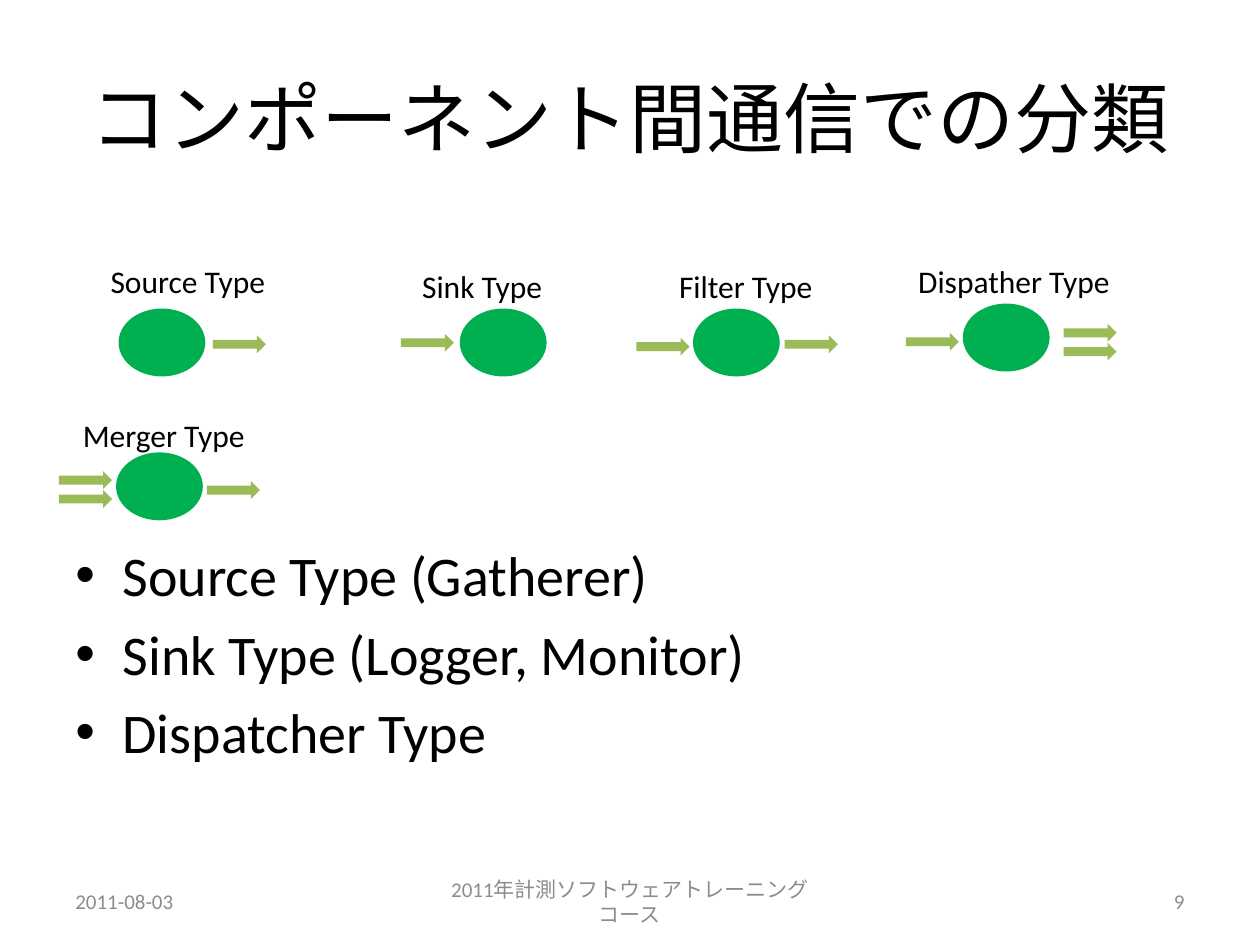
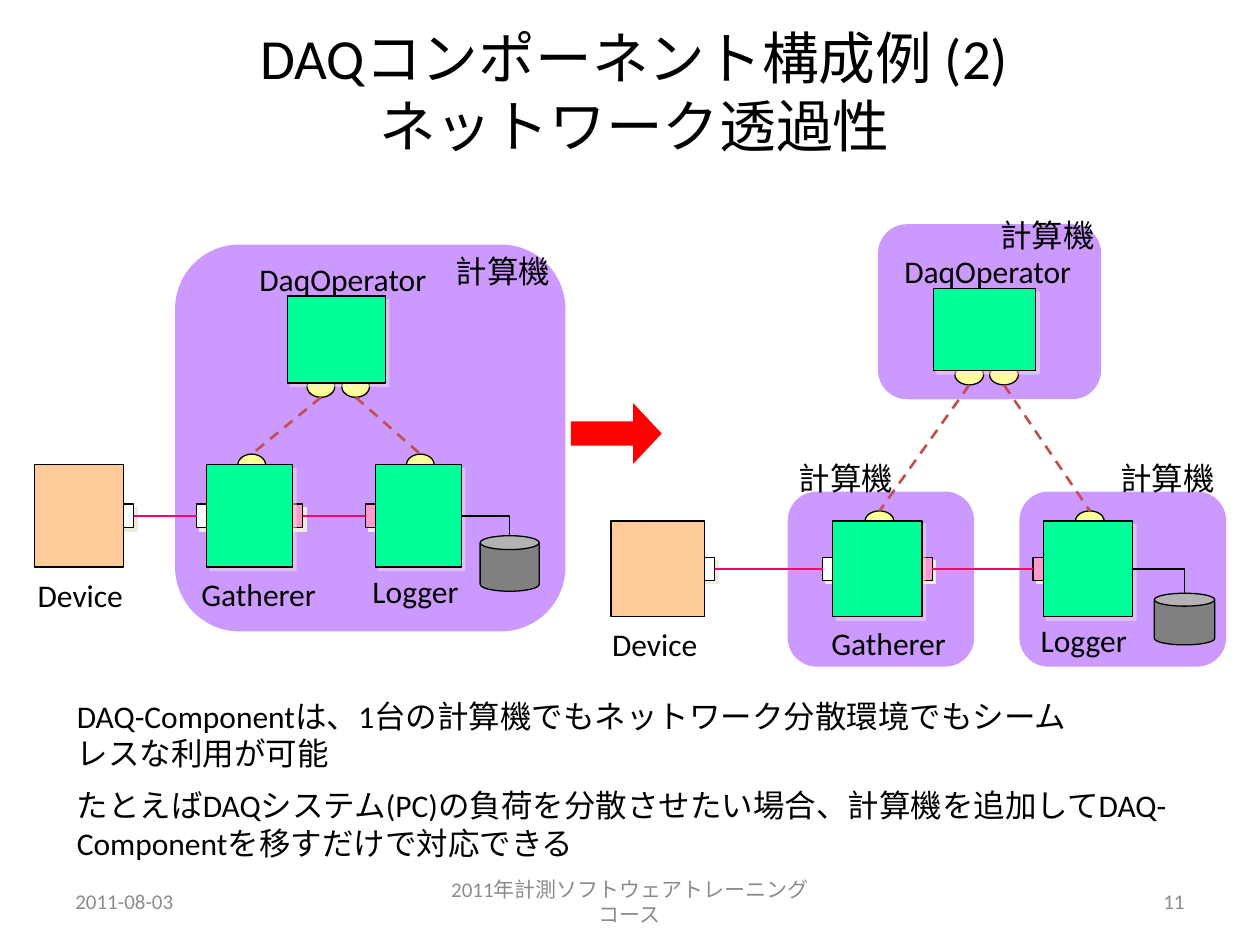
"""Build two slides on component types and network transparency in a DAQ system."""
from lxml import etree
from pptx import Presentation
from pptx.dml.color import RGBColor
from pptx.enum.dml import MSO_LINE
from pptx.enum.shapes import MSO_CONNECTOR, MSO_SHAPE
from pptx.enum.text import MSO_ANCHOR, PP_ALIGN
from pptx.oxml.ns import qn
from pptx.util import Cm, Pt

RECT, ROUND = MSO_SHAPE.RECTANGLE, MSO_SHAPE.ROUNDED_RECTANGLE
OVAL, ARROW, CAN = MSO_SHAPE.OVAL, MSO_SHAPE.RIGHT_ARROW, MSO_SHAPE.CAN
STRAIGHT, ELBOW = MSO_CONNECTOR.STRAIGHT, MSO_CONNECTOR.ELBOW
LEFT, MID, RIGHT = PP_ALIGN.LEFT, PP_ALIGN.CENTER, PP_ALIGN.RIGHT
TOP, CENTRE = MSO_ANCHOR.TOP, MSO_ANCHOR.MIDDLE
DASH = MSO_LINE.DASH

BLACK, WHITE, GREY, SHADE = "000000", "FFFFFF", "8C8C8C", "EEECE1"
GREEN, LIME, MINT, PEACH = "00B050", "9BBB59", "00FF99", "FFCC99"
LILAC, PINK, YELLOW, STEEL = "CC99FF", "FF99CC", "FFFF99", "808080"
RED, BRICK, ROSE = "FF0000", "C0504D", "FF0066"
rgb = RGBColor.from_string


def draw(slide, kind, x, y, w, h, fill, line=None, shade=0):
    """Add a filled shape, with an optional outline and shadow opacity."""
    shape = slide.shapes.add_shape(kind, Cm(x), Cm(y), Cm(w), Cm(h))
    shape.fill.solid()
    shape.fill.fore_color.rgb = rgb(fill)
    if line:
        shape.line.color.rgb = rgb(line)
        shape.line.width = Pt(0.75)
    else:
        shape.line.fill.background()
    shape.shadow.inherit = False
    if shade:
        effect = shape._element.spPr.find(qn("a:effectLst"))
        cast = etree.SubElement(effect, qn("a:outerShdw"), dist=str(Pt(2.8)),
                                dir="2700000", algn="ctr", rotWithShape="0")
        tint = etree.SubElement(cast, qn("a:srgbClr"), val=SHADE)
        etree.SubElement(tint, qn("a:alpha"), val=str(shade * 1000))
    return shape


def write(slide, lines, x, y, w, h=1.02, size=18, colour=BLACK,
          align=LEFT, anchor=TOP, wrap=False):
    """Add a text box with one paragraph for each line."""
    frame = slide.shapes.add_textbox(Cm(x), Cm(y), Cm(w), Cm(h)).text_frame
    frame.word_wrap = wrap
    frame.vertical_anchor = anchor
    for i, line in enumerate(lines):
        para = frame.paragraphs[0] if i == 0 else frame.add_paragraph()
        para.alignment = align
        run = para.add_run()
        run.text = line
        run.font.name = "Calibri"
        run.font.size = Pt(size)
        run.font.color.rgb = rgb(colour)
    return frame


deck = Presentation()
deck.slide_width, deck.slide_height = Cm(25.4), Cm(19.05)
blank = deck.slide_layouts[6]

pages = [
    ("9", ["コンポーネント間通信での分類"], (1.27, 0.76, 22.86, 3.18), 44),
    ("11", ["DAQコンポーネント構成例 (2)", "ネットワーク透過性"],
     (0.69, 0.53, 24.2, 2.59), 32.4),
]
for number, title, place, size in pages:
    slide = deck.slides.add_slide(blank)
    write(slide, title, *place, size=size, align=MID, anchor=CENTRE, wrap=True)
    for words, x, w, align in [
        ("2011-08-03", 1.27, 5.93, LEFT),
        ("2011年計測ソフトウェアトレーニングコース", 8.68, 8.04, MID),
        (number, 18.2, 5.93, RIGHT),
    ]:
        write(slide, [words], x, 17.66, w, size=12, colour=GREY,
              align=align, anchor=CENTRE, wrap=True)
kinds, net = deck.slides

body = write(kinds, ["Source Type (Gatherer)", "Sink Type (Logger, Monitor)",
                     "Dispatcher Type"], 1.27, 10.78, 22.86, 6.27, size=32, wrap=True)
for para in body.paragraphs:
    props = para._p.get_or_add_pPr()
    props.set("marL", str(Cm(0.95)))
    props.set("indent", str(-Cm(0.95)))
    before = etree.SubElement(props, qn("a:spcBef"))
    etree.SubElement(before, qn("a:spcPct"), val="20000")
    etree.SubElement(props, qn("a:buFont"), typeface="Arial")
    etree.SubElement(props, qn("a:buChar"), char="•")

types = [
    ("Source Type", (1.98, 5.16, 3.66), (2.39, 6.22), [(4.29, 6.76)]),
    ("Sink Type", (8.26, 5.26, 2.97), (9.27, 6.22), [(8.08, 6.73)]),
    ("Filter Type", (13.44, 5.26, 3.23), (13.97, 6.22),
     [(12.83, 6.81), (15.82, 6.76)]),
    ("Dispather Type", (18.26, 5.16, 4.42), (19.41, 6.12),
     [(18.26, 6.71), (21.44, 6.53), (21.44, 6.91)]),
    ("Merger Type", (1.42, 8.26, 3.81), (2.34, 9.12),
     [(1.19, 9.5), (1.19, 9.88), (4.17, 9.7)]),
]
for name, label, node, flows in types:
    draw(kinds, OVAL, *node, 1.75, 1.37, GREEN)
    for flow in flows:
        draw(kinds, ARROW, *flow, 1.07, 0.36, LIME)
    write(kinds, [name], *label)

plans = [
    {"hosts": [(3.53, 4.93, 7.87, 7.8)],
     "mid": 10.4, "high": 2.06, "port": (0.41, 0.48), "bump": (0.56, 0.43),
     "units": [(0.69, 1.8), (4.17, 1.73), (7.57, 1.73)],
     "names": [(0.51, 11.48), (3.81, 11.46), (7.26, 11.4), (4.98, 5.11)],
     "boss": (5.79, 5.97, 1.98, 1.75), "disk": (9.68, 10.8, 1.19, 1.12)},
    {"hosts": [(20.55, 9.91, 4.17, 3.53), (15.88, 9.91, 3.76, 3.53),
               (17.7, 4.52, 4.5, 3.53)],
     "mid": 11.47, "high": 1.93, "port": (0.41, 0.46), "bump": (0.58, 0.41),
     "units": [(12.32, 1.88), (16.79, 1.8), (21.03, 1.8)],
     "names": [(12.09, 12.47), (16.51, 12.45), (20.73, 12.4), (17.98, 4.95)],
     "boss": (18.82, 5.82, 2.06, 1.65), "disk": (23.27, 11.96, 1.22, 1.04)},
]
roles = [("Device", 2.46), ("Gatherer", 3.02), ("Logger", 2.49), ("DaqOperator", 4.19)]
parts = [(PEACH, None, WHITE), (MINT, WHITE, PINK), (MINT, PINK, None)]

for plan in plans:
    mid, high = plan["mid"], plan["high"]
    pw, ph = plan["port"]
    bw, bh = plan["bump"]
    for host in plan["hosts"]:
        draw(net, ROUND, *host, LILAC)
    for (name, w), spot in zip(roles, plan["names"]):
        write(net, [name], *spot, w)

    ports, tips, boxes = [], [], []
    for (x, w), (fill, *sides) in zip(plan["units"], parts):
        for edge, hue in zip((x, x + w), sides):
            if hue:
                ports.append(draw(net, RECT, edge - pw / 2, mid - ph / 2,
                                  pw, ph, hue, BLACK, 100))
        top = mid - high / 2
        if fill == MINT:
            tip = x + w / 2 + 0.04
            draw(net, OVAL, tip - bw / 2, top - bh / 2, bw, bh, YELLOW, BLACK)
            tips.append((tip, top - bh / 2))
        boxes.append(draw(net, RECT, x, top, w, high, fill, BLACK,
                          50 if fill == MINT else 0))

    x, y, w, h = plan["boss"]
    low = y + h + 0.29
    feet = [x + w / 2 + 0.04 + step for step in (-0.35, 0.35)]
    for foot in feet:
        draw(net, OVAL, foot - bw / 2, low - bh, bw, bh, YELLOW, BLACK)
    draw(net, RECT, x, y, w, h, MINT, BLACK, 50)

    x, y, w, h = plan["disk"]
    disk = draw(net, CAN, x, y, w, h, STEEL, BLACK)

    wires = []
    for foot, (tx, ty) in zip(feet, tips):
        wire = net.shapes.add_connector(STRAIGHT, Cm(foot), Cm(low), Cm(tx), Cm(ty))
        wire.line.dash_style = DASH
        wires.append((wire, BRICK, 1.5))
    for start, end, thick in [(0, 1, 0.75), (2, 3, 1.5)]:
        wire = net.shapes.add_connector(STRAIGHT, 0, 0, 0, 0)
        wire.begin_connect(ports[start], 3)
        wire.end_connect(ports[end], 1)
        wires.append((wire, ROSE, thick))
    bend = net.shapes.add_connector(ELBOW, 0, 0, 0, 0)
    bend.begin_connect(boxes[2], 3)
    bend.end_connect(disk, 1)
    bend.end_x, bend.end_y = Cm(x + w / 2), Cm(y)
    bend._element.spPr.find(qn("a:prstGeom")).set("prst", "bentConnector2")
    wires.append((bend, BLACK, 0.75))
    for wire, hue, thick in wires:
        wire.line.color.rgb = rgb(hue)
        wire.line.width = Pt(thick)
        etree.SubElement(wire._element.spPr, qn("a:effectLst"))

shift = draw(net, ARROW, 11.51, 8.13, 1.83, 1.22, RED)
shift.adjustments[0], shift.adjustments[1] = 0.4, 0.47
for x, y in [(19.91, 4.24), (8.94, 4.95), (15.85, 9.12), (22.33, 9.12)]:
    write(net, ["計算機"], x, y, 2.44)

write(net, ["DAQ-Componentは、1台の計算機でもネットワーク分散環境でもシームレスな利用が可能"],
      1.3, 13.92, 21.03, 1.78, wrap=True)
write(net, ["たとえばDAQシステム(PC)の負荷を分散させたい場合、計算機を追加して"
            "DAQ-Componentを移すだけで対応できる"], 1.3, 15.72, 24.1, 1.78, wrap=True)

deck.save("out.pptx")
